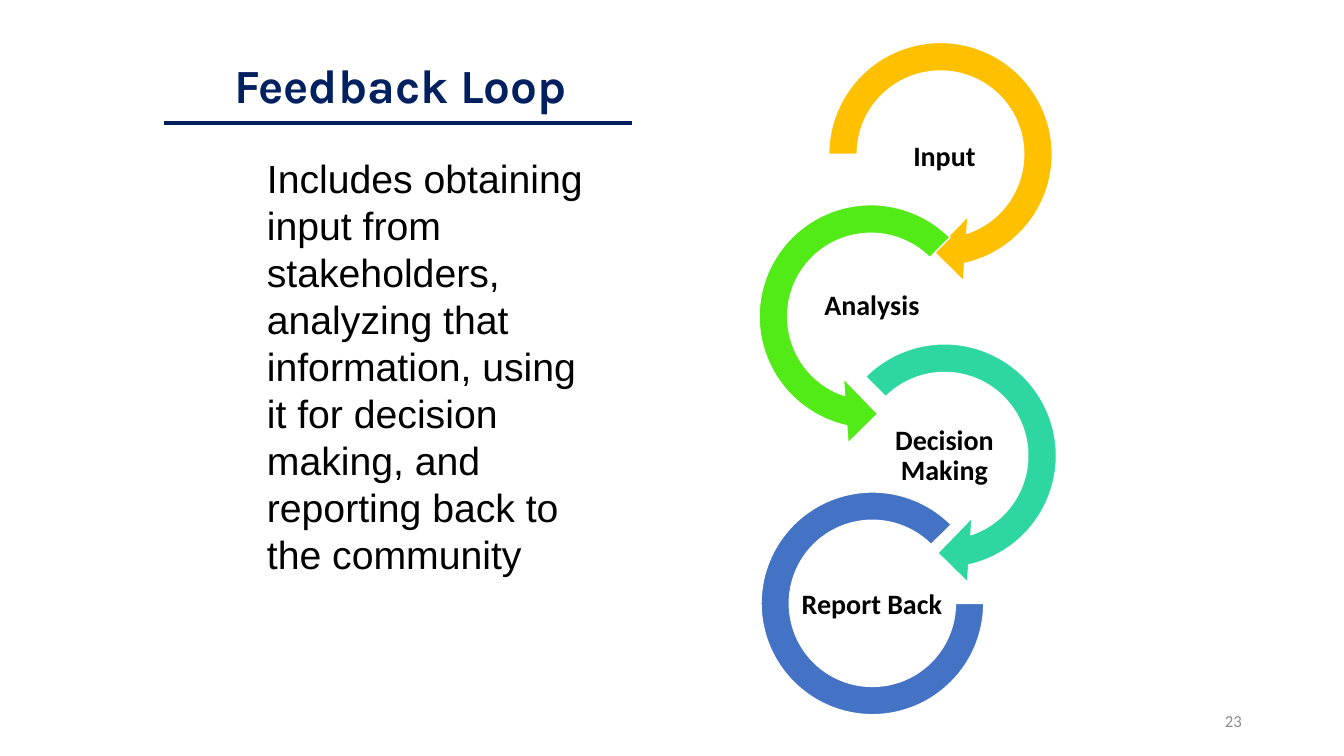
from dataclasses import dataclass

from lxml.etree import SubElement
from pptx import Presentation
from pptx.dml.color import RGBColor
from pptx.enum.shapes import MSO_CONNECTOR, MSO_SHAPE
from pptx.enum.text import MSO_ANCHOR, PP_ALIGN
from pptx.oxml.ns import qn
from pptx.util import Pt


@dataclass(frozen=True)
class Theme:
    navy: str = "002060"
    black: str = "000000"
    gray: str = "8C8C8C"
    white: str = "FFFFFF"
    amber: str = "FFC000"
    green: str = "53EB17"
    teal: str = "2ED7A1"
    blue: str = "4472C4"
    title_size: int = 34
    body_size: int = 28
    label_size: int = 20
    number_size: int = 12


theme = Theme()


def place(shape, left, top, width, height):
    shape.left, shape.top = Pt(left), Pt(top)
    shape.width, shape.height = Pt(width), Pt(height)


def write_text(shape, text, font, size, color, bold=False, inset=None,
               anchor=MSO_ANCHOR.MIDDLE, **paragraph_format):
    """Fill the shape with one formatted paragraph; inset is in points."""
    frame = shape.text_frame
    frame.word_wrap = True
    frame.vertical_anchor = anchor
    if inset is not None:
        for side in ("left", "top", "right", "bottom"):
            setattr(frame, f"margin_{side}", Pt(inset))
    paragraph = frame.paragraphs[0]
    for name, value in paragraph_format.items():
        setattr(paragraph, name, value)
    run = paragraph.add_run()
    run.text = text
    for name, value in {"name": font, "size": Pt(size), "bold": bold}.items():
        setattr(run.font, name, value)
    run.font.color.rgb = RGBColor.from_string(color)


presentation = Presentation()
presentation.slide_width, presentation.slide_height = Pt(960), Pt(540)
slide = presentation.slides.add_slide(presentation.slide_layouts[5])
shapes = slide.shapes

# Title
title = shapes.title
place(title, 160, 10.8, 583, 104.4)
write_text(title, "Feedback Loop", "Karla", theme.title_size, theme.navy, bold=True,
           alignment=PP_ALIGN.LEFT, line_spacing=0.9)

# Loop: name, preset, colour, left, top, size, adjustments, label left
left_label, right_label = 571, 622.8
label_top, label_step = 86.4, 106.8
arrow_size, arc_size = 185.8, 159.1
head = (0.11, 11.42)
steps = [
    ("Input", MSO_SHAPE.CIRCULAR_ARROW, theme.amber, 578.9, 17.3, arrow_size,
     (*head, 45, 108, 0.125), right_label),
    ("Analysis", MSO_SHAPE.LEFT_CIRCULAR_ARROW, theme.green, 529.2, 133.2, arrow_size,
     (*head, 63, 189, 0.125), left_label),
    ("Decision Making", MSO_SHAPE.CIRCULAR_ARROW, theme.teal, 581.8, 232.6, arrow_size,
     (*head, 45, 135, 0.125), right_label),
    ("Report Back", MSO_SHAPE.BLOCK_ARC, theme.blue, 543.6, 351.4, arc_size,
     (0, 189, 0.127), left_label),
]
for index, (name, preset, color, left, top, size, adjustments, label_left) in enumerate(steps):
    ring = shapes.add_shape(preset, Pt(left), Pt(top), Pt(size), Pt(size))
    for position, value in enumerate(adjustments):
        ring.adjustments[position] = value
    ring.shadow.inherit = False
    ring.fill.solid()
    ring.fill.fore_color.rgb = RGBColor.from_string(color)
    ring.line.color.rgb = RGBColor.from_string(theme.white)
    ring.line.width = Pt(1)

    label = shapes.add_textbox(Pt(label_left), Pt(label_top + index * label_step),
                               Pt(103.7), Pt(51.8))
    write_text(label, name, "Calibri", theme.label_size, theme.black, bold=True, inset=1,
               alignment=PP_ALIGN.CENTER, line_spacing=0.9, space_after=Pt(7))

# Description
description = shapes.add_textbox(Pt(183.6), Pt(106.6), Pt(239.8), Pt(368.6))
write_text(description,
           "Includes obtaining input from stakeholders, analyzing that information, "
           "using it for decision making, and reporting back to the community",
           "Arial", theme.body_size, theme.black, anchor=MSO_ANCHOR.TOP)

# Slide number
slide_number = shapes.add_textbox(Pt(678.2), Pt(500.4), Pt(216), Pt(28.8))
write_text(slide_number, "23", "Calibri", theme.number_size, theme.gray,
           alignment=PP_ALIGN.RIGHT)

# Rule under the title
rule = shapes.add_connector(MSO_CONNECTOR.STRAIGHT, Pt(117.4), Pt(87.8), Pt(451.4), Pt(87.8))
rule.line.color.rgb = RGBColor.from_string(theme.navy)
rule.line.width = Pt(2.5)
SubElement(rule._element.spPr, qn("a:effectLst"))

presentation.save("out.pptx")
